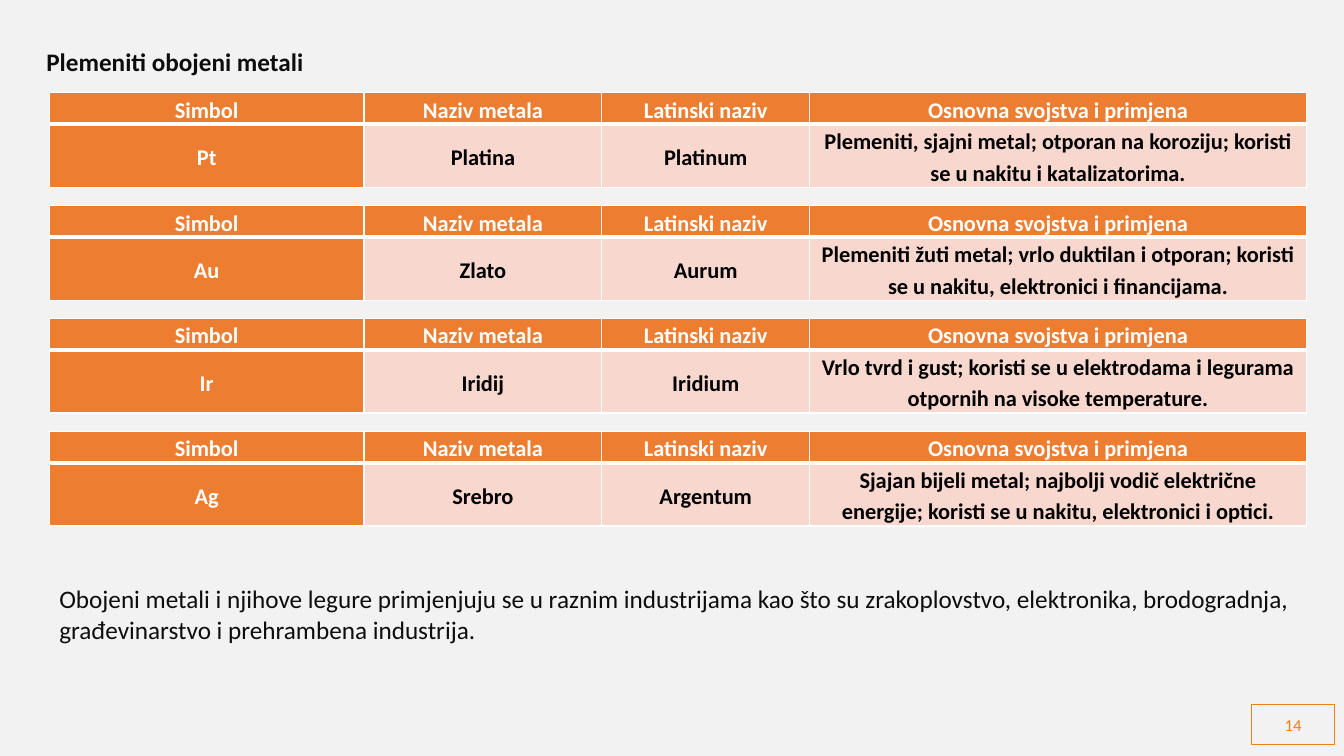
from lxml import etree
from pptx import Presentation
from pptx.dml.color import RGBColor
from pptx.enum import shapes, text
from pptx.oxml.ns import qn
from pptx.util import Inches, Pt

FONT = "Calibri"
BACKGROUND = RGBColor(0xF2, 0xF2, 0xF2)
INK = RGBColor(0x0D, 0x0D, 0x0D)
BLACK = RGBColor(0, 0, 0)
WHITE = RGBColor(0xFF, 0xFF, 0xFF)
ORANGE = RGBColor(0xED, 0x7D, 0x31)
PEACH = RGBColor(0xF8, 0xD7, 0xCE)
AMBER = RGBColor(0xEB, 0x81, 0x13)

HEADERS = ("Simbol", "Naziv metala", "Latinski naziv", "Osnovna svojstva i primjena")
METALS = (
    ("Pt", "Platina", "Platinum",
     "Plemeniti, sjajni metal; otporan na koroziju; koristi se u nakitu i katalizatorima."),
    ("Au", "Zlato", "Aurum",
     "Plemeniti žuti metal; vrlo duktilan i otporan; koristi se u nakitu, elektronici i financijama."),
    ("Ir", "Iridij", "Iridium",
     "Vrlo tvrd i gust; koristi se u elektrodama i legurama otpornih na visoke temperature."),
    ("Ag", "Srebro", "Argentum",
     "Sjajan bijeli metal; najbolji vodič električne energije; koristi se u nakitu, elektronici i optici."),
)
COLUMN_WIDTHS = (3.12, 2.36, 2.06, 4.93)
ROW_HEIGHTS = (0.31, 0.61)
TABLE_LEFT, TABLE_TOP, TABLE_PITCH = 0.49, 0.92, 1.12


def write(tf, content, size, color, bold=False, align=text.PP_ALIGN.LEFT):
    tf.text = content
    p = tf.paragraphs[0]
    p.alignment = align
    font = p.runs[0].font
    font.name, font.size, font.bold = FONT, Pt(size), bold
    font.color.rgb = color
    return p


def set_borders(cell, widths):
    tcPr = cell._tc.get_or_add_tcPr()
    for side, width in zip("LRTB", widths):
        ln = etree.SubElement(tcPr, qn(f"a:ln{side}"), w=str(Pt(width)))
        fill = etree.SubElement(ln, qn("a:solidFill"))
        etree.SubElement(fill, qn("a:srgbClr"), val=str(WHITE))


def format_cell(cell, content, fill, color, borders):
    p = write(cell.text_frame, content, 16, color, True, text.PP_ALIGN.CENTER)
    p.line_spacing = 1.15
    p.space_after = Pt(10)
    cell.vertical_anchor = text.MSO_ANCHOR.MIDDLE
    cell.margin_left = cell.margin_right = Inches(0.07)
    cell.margin_top = cell.margin_bottom = 0
    set_borders(cell, borders)
    cell.fill.solid()
    cell.fill.fore_color.rgb = fill


def add_metal_table(s, top, metal):
    table = s.shapes.add_table(
        2, len(HEADERS), Inches(TABLE_LEFT), Inches(top),
        Inches(sum(COLUMN_WIDTHS)), Inches(sum(ROW_HEIGHTS))).table
    for row, height in zip(table.rows, ROW_HEIGHTS):
        row.height = Inches(height)
    for i, width in enumerate(COLUMN_WIDTHS):
        table.columns[i].width = Inches(width)
        format_cell(table.cell(0, i), HEADERS[i], ORANGE, WHITE, (1, 1, 1, 3))
        fill, color = (ORANGE, WHITE) if i == 0 else (PEACH, BLACK)
        format_cell(table.cell(1, i), metal[i], fill, color, (1, 1, 3, 1))


def add_title(s, content):
    sp = s.shapes.title
    sp.left, sp.top, sp.width, sp.height = map(Inches, (0.36, 0.41, 2.77, 0.4))
    tf = sp.text_frame
    write(tf, content, 18, INK, True).line_spacing = 1.0
    tf.word_wrap = False
    tf.auto_size = text.MSO_AUTO_SIZE.NONE
    tf.vertical_anchor = text.MSO_ANCHOR.TOP


def add_note(s, content):
    tf = s.shapes.add_textbox(*map(Inches, (0.49, 5.74, 12.47, 0.71))).text_frame
    tf.word_wrap = True
    write(tf, content, 18, INK)


def add_page_number(s, number):
    sp = s.shapes.add_shape(shapes.MSO_SHAPE.RECTANGLE,
                            *map(Inches, (12.41, 6.99, 0.83, 0.4)))
    sp.shadow.inherit = False
    sp.fill.background()
    sp.line.color.rgb = AMBER
    sp.line.width = Pt(0.75)
    sp.text_frame.vertical_anchor = text.MSO_ANCHOR.MIDDLE
    write(sp.text_frame, number, 12, AMBER, align=text.PP_ALIGN.CENTER)


def main():
    prs = Presentation()
    prs.slide_width, prs.slide_height = Inches(13.33), Inches(7.5)
    s = prs.slides.add_slide(prs.slide_layouts[5])
    s.background.fill.solid()
    s.background.fill.fore_color.rgb = BACKGROUND
    add_title(s, "Plemeniti obojeni metali")
    for i, metal in enumerate(METALS):
        add_metal_table(s, TABLE_TOP + i * TABLE_PITCH, metal)
    add_note(s, "Obojeni metali i njihove legure primjenjuju se u raznim industrijama "
                "kao što su zrakoplovstvo, elektronika, brodogradnja, građevinarstvo "
                "i prehrambena industrija.")
    add_page_number(s, "14")
    prs.save("out.pptx")


if __name__ == "__main__":
    main()
